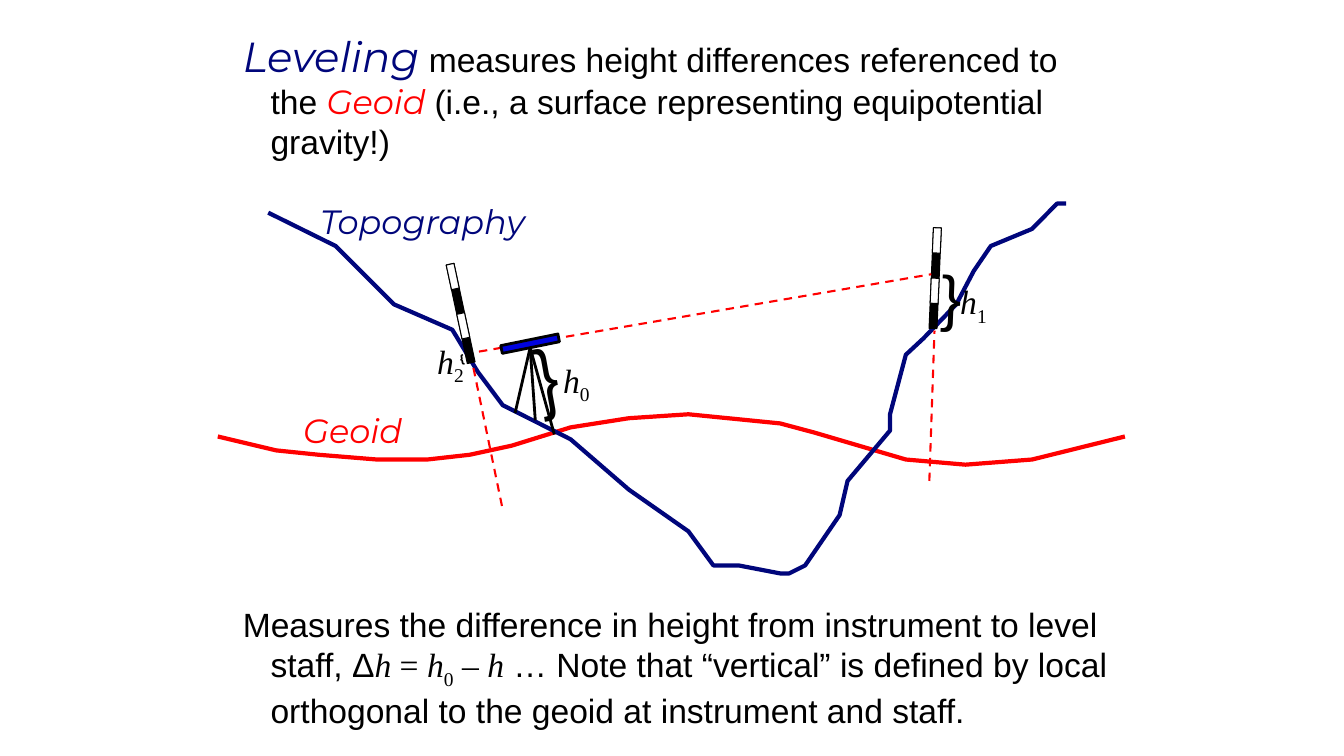
from dataclasses import dataclass
from math import cos, radians, sin

from lxml.etree import SubElement
from pptx import Presentation
from pptx.dml.color import RGBColor
from pptx.enum.dml import MSO_LINE
from pptx.enum.shapes import MSO_CONNECTOR, MSO_SHAPE
from pptx.enum.text import MSO_AUTO_SIZE
from pptx.oxml.ns import qn
from pptx.util import Cm, Pt


@dataclass(frozen=True)
class TextStyle:
    font: str
    size: float
    color: str = "000000"
    italic: bool = False
    bold: bool = False
    baseline: int = 0


@dataclass(frozen=True)
class Theme:
    navy: str = "00067B"
    red: str = "FF0000"
    black: str = "000000"
    white: str = "FFFFFF"
    instrument: str = "0003DD"
    body: TextStyle = TextStyle("Arial", 24)
    headline: TextStyle = TextStyle("Montserrat", 30, "00067B", italic=True)
    topography: TextStyle = TextStyle("Montserrat", 24, "00067B", italic=True)
    geoid: TextStyle = TextStyle("Montserrat", 24, "FF0000", italic=True)
    symbol: TextStyle = TextStyle("Times New Roman", 24, italic=True)
    operator: TextStyle = TextStyle("Times New Roman", 24)
    index: TextStyle = TextStyle("Times New Roman", 24, baseline=-25000)
    large_brace: TextStyle = TextStyle("Arial Narrow", 56)
    medium_brace: TextStyle = TextStyle("Arial", 44)
    small_brace: TextStyle = TextStyle("Montserrat", 8, bold=True)


def add_bar(center_x, center_y, width, height, rotation, fill, line_width):
    """Add a rotated, black-edged rectangle placed by its centre, in centimetres."""
    bar = slide.shapes.add_shape(
        MSO_SHAPE.RECTANGLE, Cm(center_x - width / 2), Cm(center_y - height / 2),
        Cm(width), Cm(height))
    bar.shadow.inherit = False
    bar.rotation = rotation
    bar.fill.solid()
    bar.fill.fore_color.rgb = RGBColor.from_string(fill)
    bar.line.color.rgb = RGBColor.from_string(theme.black)
    bar.line.width = Pt(line_width)
    return bar


def add_line(start, end, color, width, dashed=False):
    connector = slide.shapes.add_connector(
        MSO_CONNECTOR.STRAIGHT, *(Cm(value) for value in (*start, *end)))
    connector.line.color.rgb = RGBColor.from_string(color)
    connector.line.width = Pt(width)
    if dashed:
        connector.line.dash_style = MSO_LINE.DASH
    SubElement(connector._element.spPr, qn("a:effectLst"))
    return connector


theme = Theme()
presentation = Presentation()
presentation.slide_width = Cm(33.87)
presentation.slide_height = Cm(19.05)
slide = presentation.slides.add_slide(presentation.slide_layouts[6])

# Geoid and topography profiles
geoid_points = [
    (5.49, 11), (6.96, 11.35), (8.03, 11.46), (9.5, 11.58), (10.77, 11.58),
    (11.84, 11.46), (12.9, 11.23), (14.38, 10.77), (15.85, 10.54),
    (17.35, 10.44), (19.66, 10.67), (20.52, 10.9), (22.83, 11.58),
    (24.33, 11.71), (26.01, 11.58), (28.35, 11)]
topography_points = [
    (6.76, 5.36), (8.46, 6.2), (9.3, 7.04), (9.93, 7.67), (11.4, 8.31),
    (12.04, 9.37), (12.67, 10.21), (14.38, 11.07), (15.85, 12.34),
    (17.35, 13.39), (17.98, 14.25), (18.62, 14.25), (19.66, 14.45),
    (19.89, 14.45), (20.29, 14.25), (21.16, 12.98), (21.36, 12.12),
    (22.43, 10.85), (22.43, 10.44), (22.83, 8.94), (23.27, 8.53),
    (24.1, 7.67), (24.54, 6.83), (24.97, 6.2), (26.01, 5.77),
    (26.64, 5.13), (26.87, 5.13)]
for points, color in ((geoid_points, theme.red), (topography_points, theme.navy)):
    vertices = [(Cm(x), Cm(y)) for x, y in points]
    builder = slide.shapes.build_freeform(*vertices[0])
    builder.add_line_segments(vertices[1:], close=False)
    profile = builder.convert_to_shape()
    profile.shadow.inherit = False
    profile.fill.background()
    profile.line.color.rgb = RGBColor.from_string(color)
    profile.line.width = Pt(3)

# Level staffs: a black bar with two white quarters
staff_width, staff_length = 0.2, 2.54
for center_x, center_y, angle in ((11.61, 7.9, 347.9), (23.57, 7.01, 2.5)):
    add_bar(center_x, center_y, staff_width, staff_length, angle, theme.black, 0.75)
    for position in (-1 / 8, 3 / 8):
        distance = position * staff_length
        add_bar(center_x + distance * sin(radians(angle)),
                center_y - distance * cos(radians(angle)),
                staff_width, staff_length / 4, angle, theme.white, 0.75)

# Sight line and plumb lines
for start, end in (((12.07, 8.86), (23.47, 6.91)),
                   ((23.42, 12.12), (23.55, 8.33)),
                   ((12.65, 12.75), (11.91, 9.17))):
    add_line(start, end, theme.red, 1.5, dashed=True)

# Instrument on its tripod
instrument = add_bar(13.36, 8.66, 1.47, 0.2, 348.5, theme.instrument, 2)
for foot in ((12.98, 10.41), (13.49, 10.59), (13.97, 10.95)):
    leg = add_line(foot, (13.36, 8.76), theme.black, 2)
    leg.end_connect(instrument, 2)

# Texts: left, top, width, height, rotation, paragraphs of (text, style) runs
texts = [
    (5.87, 0.64, 21.69, 3.58, 0, [
        [("Leveling", theme.headline),
         (" measures height differences referenced to", theme.body)],
        [("the ", theme.body), ("Geoid ", theme.geoid),
         ("(i.e., a surface representing equipotential", theme.body)],
        [("gravity!)", theme.body)]]),
    (7.39, 10.21, 3.51, 1.27, 0, [[("Geoid", theme.geoid)]]),
    (7.82, 4.93, 5.97, 1.27, 0, [[("Topography", theme.topography)]]),
    (5.87, 15.09, 22.53, 3.33, 0, [
        [("Measures the difference in height from instrument to level", theme.body)],
        [("staff, Δ", theme.body), ("h", theme.symbol), (" = ", theme.operator),
         ("h", theme.symbol), ("0", theme.index), (" – ", theme.operator),
         ("h", theme.symbol),
         (" … Note that “vertical” is defined by local", theme.body)],
        [("orthogonal to the geoid at instrument and staff.", theme.body)]]),
    (13.26, 8.1, 1.04, 2.62, 349.6, [[("}", theme.large_brace)]]),
    (23.47, 6.38, 1.04, 2.11, 2.3, [[("}", theme.medium_brace)]]),
    (11.33, 8.74, 0.61, 0.58, 349.6, [[("{", theme.small_brace)]]),
]
for index, left, top in (("0", 13.94, 8.94), ("1", 23.95, 6.96), ("2", 10.77, 8.46)):
    texts.append((left, top, 1.22, 1.27, 0,
                  [[("h", theme.symbol), (index, theme.index)]]))

for left, top, width, height, rotation, paragraphs in texts:
    text_box = slide.shapes.add_textbox(Cm(left), Cm(top), Cm(width), Cm(height))
    text_box.rotation = rotation
    text_frame = text_box.text_frame
    text_frame.word_wrap = False
    text_frame.auto_size = MSO_AUTO_SIZE.SHAPE_TO_FIT_TEXT
    for number, runs in enumerate(paragraphs):
        paragraph = text_frame.add_paragraph() if number else text_frame.paragraphs[0]
        if number:
            paragraph._p.get_or_add_pPr().set("marL", str(Cm(0.7)))
        for text, style in runs:
            run = paragraph.add_run()
            run.text = text
            run.font.name = style.font
            run.font.size = Pt(style.size)
            run.font.italic = style.italic
            run.font.bold = style.bold
            run.font.color.rgb = RGBColor.from_string(style.color)
            if style.baseline:
                run._r.get_or_add_rPr().set("baseline", str(style.baseline))

presentation.save("out.pptx")
